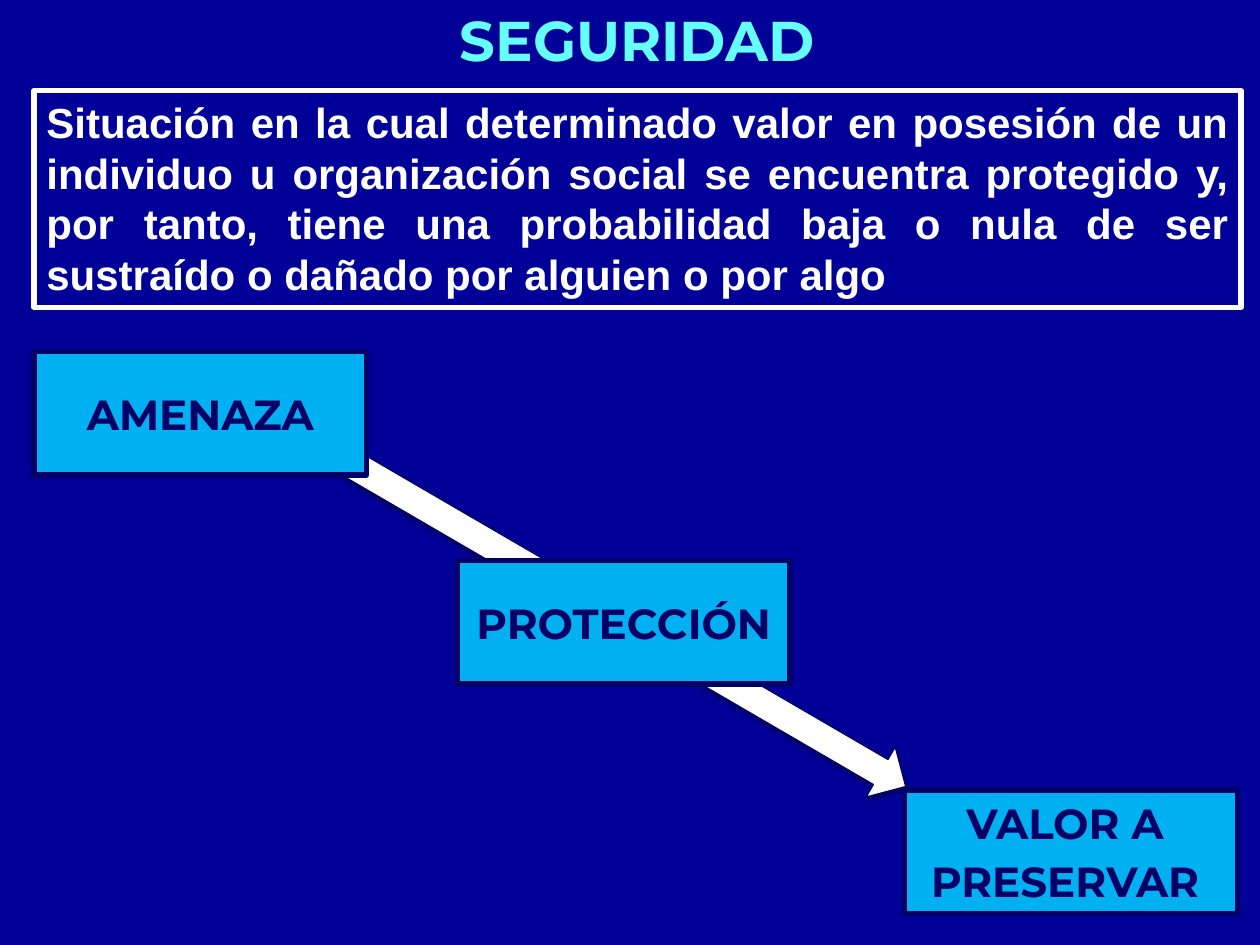
import lxml.etree
import pptx
import pptx.dml.color
import pptx.enum.shapes
import pptx.enum.text
import pptx.oxml.ns
import pptx.util
from pptx.util import Inches

RGBColor = pptx.dml.color.RGBColor
MSO_SHAPE = pptx.enum.shapes.MSO_SHAPE
PP_ALIGN = pptx.enum.text.PP_ALIGN
MSO_ANCHOR = pptx.enum.text.MSO_ANCHOR

BACKGROUND = RGBColor(0x00, 0x00, 0x99)
CYAN = RGBColor(0x66, 0xFF, 0xFF)
WHITE = RGBColor(0xFF, 0xFF, 0xFF)
SKY = RGBColor(0x00, 0xB0, 0xF0)
NAVY = RGBColor(0x00, 0x00, 0x66)
ARROW_EDGE = RGBColor(0x00, 0x00, 0x64)


def add_box(kind, left, top, width, height, fill, line, line_width):
    box = slide.shapes.add_shape(
        kind, Inches(left), Inches(top), Inches(width), Inches(height)
    )
    box.shadow.inherit = False
    if fill is None:
        box.fill.background()
    else:
        box.fill.solid()
        box.fill.fore_color.rgb = fill
    box.line.color.rgb = line
    box.line.width = pptx.util.Pt(line_width)
    return box


def write(box, text, font, size, color, align, anchor, wrap, space_after):
    frame = box.text_frame
    frame.text = text
    frame.word_wrap = wrap
    frame.vertical_anchor = anchor
    for paragraph in frame.paragraphs:
        paragraph.alignment = align
        paragraph.space_after = pptx.util.Pt(space_after)
        paragraph.font.name = font
        paragraph.font.size = pptx.util.Pt(size)
        paragraph.font.bold = True
        paragraph.font.color.rgb = color


presentation = pptx.Presentation()
presentation.slide_width = Inches(10)
presentation.slide_height = Inches(7.5)
slide = presentation.slides.add_slide(presentation.slide_layouts[6])
slide.background.fill.solid()
slide.background.fill.fore_color.rgb = BACKGROUND

title = slide.shapes.add_textbox(Inches(0.06), Inches(0.08), Inches(10), Inches(0.55))
write(title, "SEGURIDAD", "Montserrat", 32, CYAN,
      PP_ALIGN.CENTER, MSO_ANCHOR.BOTTOM, True, 0)

threat_path = add_box(MSO_SHAPE.RIGHT_ARROW, 2.36, 4.71, 5.18, 0.46,
                      WHITE, ARROW_EDGE, 0.75)
threat_path.rotation = 30.2
effects = threat_path._element.spPr.find(pptx.oxml.ns.qn("a:effectLst"))
shadow = lxml.etree.SubElement(
    effects, pptx.oxml.ns.qn("a:outerShdw"),
    blurRad=str(pptx.util.Pt(3.1)), dist=str(pptx.util.Pt(1.6)),
    dir="5400000", rotWithShape="0",
)
shadow_color = lxml.etree.SubElement(
    shadow, pptx.oxml.ns.qn("a:srgbClr"), val="000000"
)
lxml.etree.SubElement(shadow_color, pptx.oxml.ns.qn("a:alpha"), val="38000")

definition = add_box(MSO_SHAPE.RECTANGLE, 0.27, 0.72, 9.58, 1.72, None, WHITE, 3)
write(
    definition,
    "Situación en la cual determinado valor en posesión de un individuo u "
    "organización social se encuentra protegido y, por tanto, tiene una "
    "probabilidad baja o nula de ser sustraído o dañado por alguien o por algo",
    "Arial", 24, WHITE, PP_ALIGN.JUSTIFY, MSO_ANCHOR.TOP, True, 4.5,
)

for label, left, top in [
    ("AMENAZA", 0.27, 2.79),
    ("PROTECCIÓN", 3.63, 4.45),
    ("VALOR A \nPRESERVAR ", 7.18, 6.27),
]:
    stage = add_box(MSO_SHAPE.RECTANGLE, left, top, 2.64, 0.98, SKY, NAVY, 3)
    write(stage, label, "Montserrat", 24, NAVY,
          PP_ALIGN.CENTER, MSO_ANCHOR.MIDDLE, False, 4.5)

presentation.save("out.pptx")
